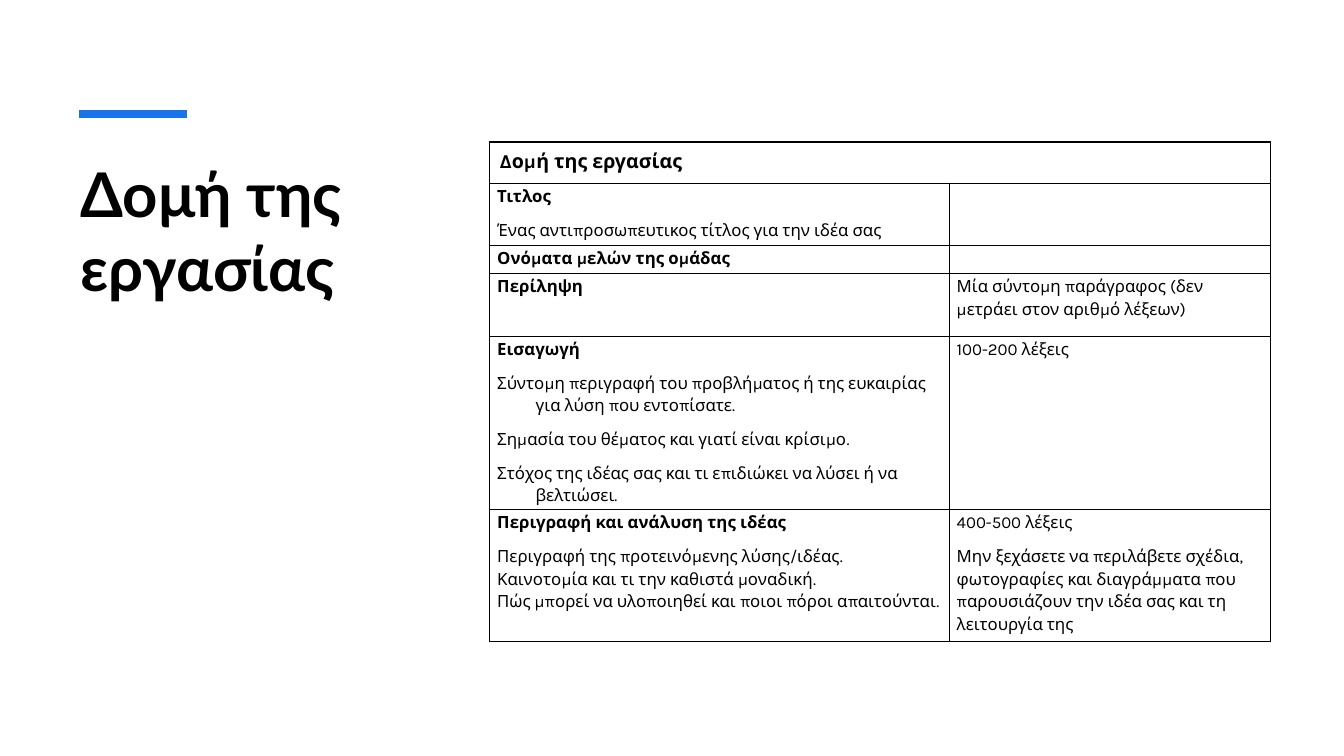
from lxml import etree
from pptx import Presentation
from pptx import util as u
from pptx.dml.color import RGBColor
from pptx.enum import shapes, text
from pptx.oxml import ns

COLORS = {"ink": "000000", "paper": "FFFFFF", "accent": "1973EB"}
TITLE = "Δομή της εργασίας"
COLUMN_WIDTHS = [11.58, 8.1]
HEADER_HEIGHT = 1.04
HANGING = {"hanging": 0.97}
LISTED = {"hanging": 0.97, "after": 0}

# Each row: height, heading, details as (text, format), right-hand paragraphs
ROWS = [
    (1.57, "Τιτλος", [("Ένας αντιπροσωπευτικος τίτλος για την ιδέα σας", {})], []),
    (0.71, "Ονόματα μελών της ομάδας", [], []),
    (1.57, "Περίληψη", [],
     ["Μία σύντομη παράγραφος (δεν μετράει στον αριθμό λέξεων)"]),
    (3.89, "Εισαγωγή", [
        ("Σύντομη περιγραφή του προβλήματος ή της ευκαιρίας για λύση που εντοπίσατε.", HANGING),
        ("Σημασία του θέματος και γιατί είναι κρίσιμο.", HANGING),
        ("Στόχος της ιδέας σας και τι επιδιώκει να λύσει ή να βελτιώσει.", HANGING),
    ], ["100-200 λέξεις"]),
    (3.33, "Περιγραφή και ανάλυση της ιδέας", [
        ("Περιγραφή της προτεινόμενης λύσης/ιδέας.", LISTED),
        ("Καινοτομία και τι την καθιστά μοναδική.", LISTED),
        ("Πώς μπορεί να υλοποιηθεί και ποιοι πόροι απαιτούνται.", HANGING),
    ], ["400-500 λέξεις",
        "Μην ξεχάσετε να περιλάβετε σχέδια, φωτογραφίες και διαγράμματα που "
        "παρουσιάζουν την ιδέα σας και τη λειτουργία της"]),
]


def color(name):
    return RGBColor.from_string(COLORS[name])


def write(paragraph, content, *, size=12, font="Karla", bold=False,
          spacing=1.15, after=8, hanging=0):
    """Fill one paragraph with formatted text."""
    paragraph.line_spacing = spacing
    paragraph.space_after = u.Pt(after)
    if hanging:
        properties = paragraph._p.get_or_add_pPr()
        properties.set("marL", str(u.Cm(hanging)))
        properties.set("indent", str(-u.Cm(hanging)))
    run = paragraph.add_run()
    run.text = content
    run.font.size = u.Pt(size)
    run.font.name = font
    run.font.bold = bold
    run.font.color.rgb = color("ink")


def add_title(slide):
    box = slide.shapes.add_textbox(u.Cm(1.78), u.Cm(3.81), u.Cm(9.02), u.Cm(7.49))
    frame = box.text_frame
    frame.word_wrap = True
    frame.vertical_anchor = text.MSO_ANCHOR.TOP
    write(frame.paragraphs[0], TITLE, size=44, font="Lato", bold=True, spacing=1.0, after=0)


def add_accent_line(slide):
    line = slide.shapes.add_connector(
        shapes.MSO_CONNECTOR.STRAIGHT, u.Cm(1.98), u.Cm(2.87), u.Cm(4.7), u.Cm(2.87))
    line.line.color.rgb = color("accent")
    line.line.width = u.Pt(6)
    etree.SubElement(line._element.spPr, ns.qn("a:effectLst"))


def style_cell(cell):
    """Give a cell thin borders, a plain fill and tight margins."""
    properties = cell._tc.get_or_add_tcPr()
    for side in ("lnL", "lnR", "lnT", "lnB"):
        border = etree.SubElement(properties, ns.qn(f"a:{side}"), w=str(u.Pt(1)))
        fill = etree.SubElement(border, ns.qn("a:solidFill"))
        etree.SubElement(fill, ns.qn("a:srgbClr"), val=COLORS["ink"])
    cell.fill.solid()
    cell.fill.fore_color.rgb = color("paper")
    cell.margin_left = cell.margin_right = u.Cm(0.19)
    cell.margin_top, cell.margin_bottom = u.Cm(0.02), 0


def fill_cell(cell, entries):
    """Write (text, format) entries; an empty cell keeps a small text size."""
    frame = cell.text_frame
    if not entries:
        etree.SubElement(frame.paragraphs[0]._p, ns.qn("a:endParaRPr"), sz="1200")
    for index, (content, options) in enumerate(entries):
        paragraph = frame.add_paragraph() if index else frame.paragraphs[0]
        write(paragraph, content, **options)


def add_structure_table(slide):
    heights = [HEADER_HEIGHT] + [row[0] for row in ROWS]
    frame = slide.shapes.add_table(
        len(heights), len(COLUMN_WIDTHS), u.Cm(12.34), u.Cm(3.58),
        u.Cm(sum(COLUMN_WIDTHS)), u.Cm(sum(heights)))
    table = frame.table
    table.first_row = table.horz_banding = False
    for column, width in zip(table.columns, COLUMN_WIDTHS):
        column.width = u.Cm(width)
    for row, height in zip(table.rows, heights):
        row.height = u.Cm(height)
    for cell in table.iter_cells():
        style_cell(cell)

    # Header across both columns
    header = table.cell(0, 0)
    header.merge(table.cell(0, 1))
    header.margin_left = header.margin_right = u.Cm(0.25)
    header.margin_top = header.margin_bottom = u.Cm(0.13)
    fill_cell(header, [(TITLE, {"size": 14, "bold": True})])

    # Sections
    for index, (_, heading, details, notes) in enumerate(ROWS, start=1):
        fill_cell(table.cell(index, 0), [(heading, {"bold": True})] + details)
        fill_cell(table.cell(index, 1), [(note, {}) for note in notes])


def main():
    presentation = Presentation()
    presentation.slide_width = u.Cm(33.87)
    presentation.slide_height = u.Cm(19.05)
    slide = presentation.slides.add_slide(presentation.slide_layouts[6])
    add_title(slide)
    add_accent_line(slide)
    add_structure_table(slide)
    presentation.save("out.pptx")


if __name__ == "__main__":
    main()
